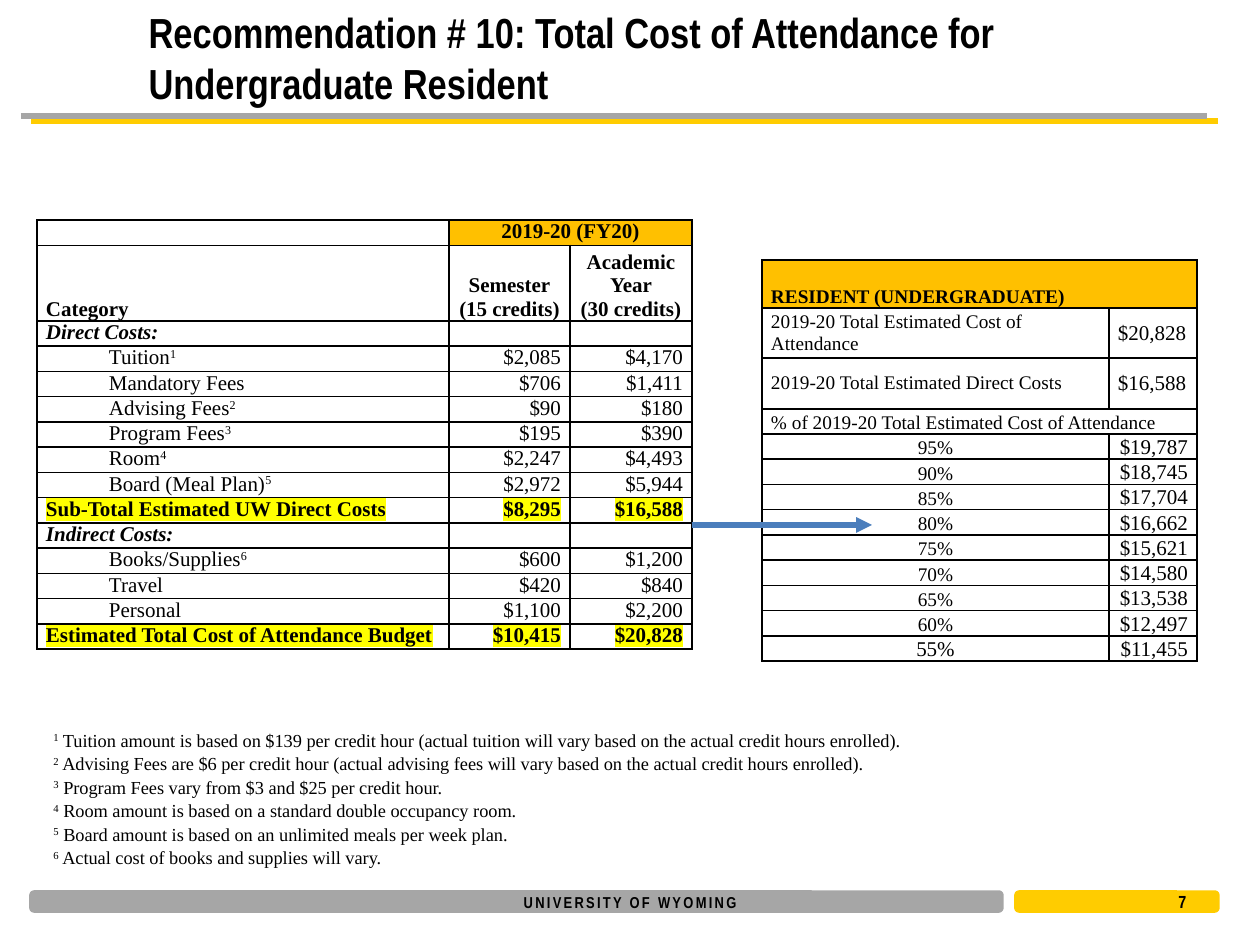
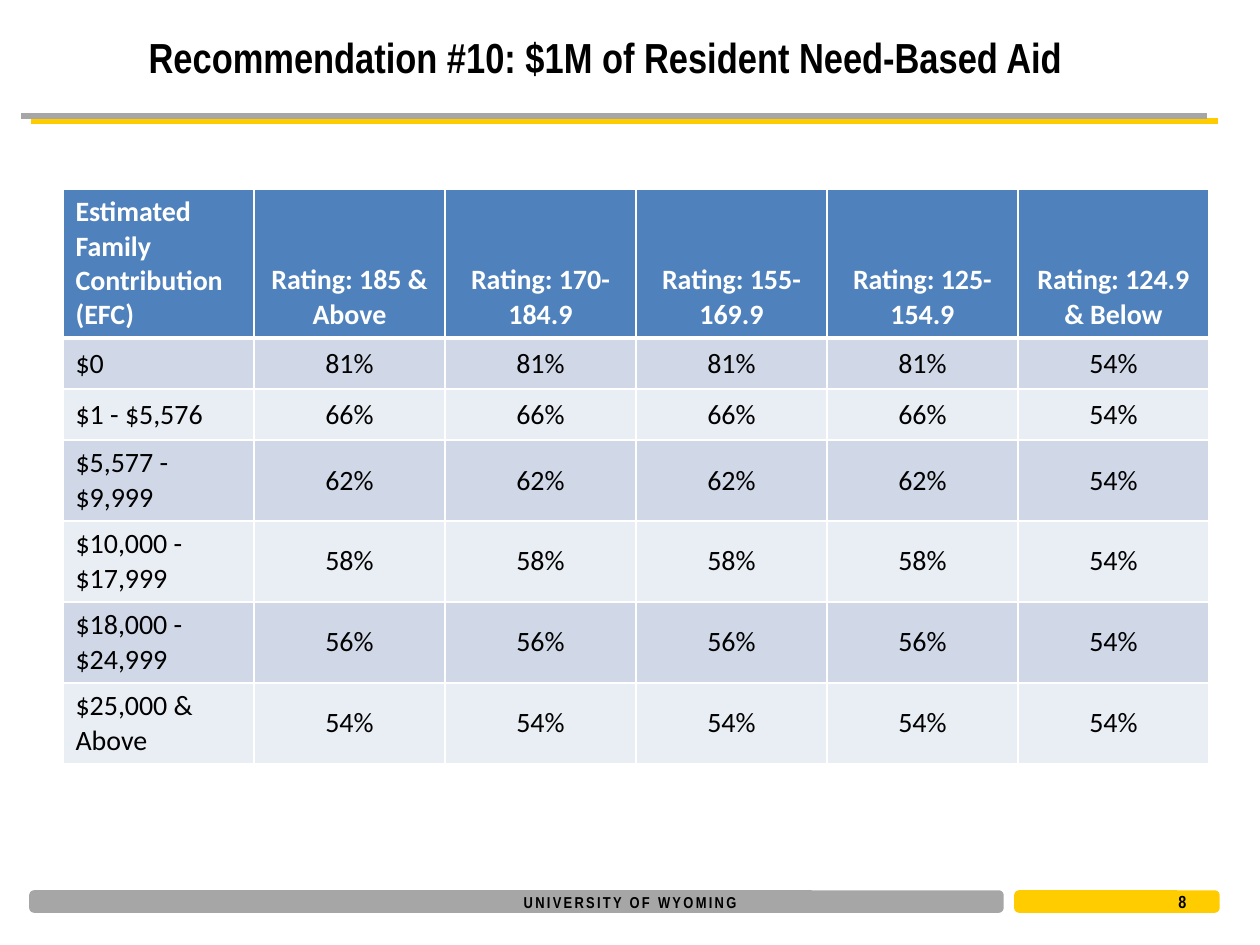
import collections

import lxml.etree
import pptx
import pptx.dml.color
import pptx.enum.shapes
import pptx.enum.text
import pptx.oxml.ns
import pptx.util

RGB = pptx.dml.color.RGBColor
BLACK = RGB(0x00, 0x00, 0x00)
WHITE = RGB(0xFF, 0xFF, 0xFF)
GRAY = RGB(0xA6, 0xA6, 0xA6)
GOLD = RGB(0xFF, 0xCC, 0x00)
AMBER = RGB(0xFF, 0xC0, 0x00)
YELLOW = RGB(0xFF, 0xFF, 0x00)
ARROW_BLUE = RGB(0x4B, 0x7E, 0xBC)
HEADER_BLUE = RGB(0x4F, 0x81, 0xBD)
BAND_DARK = RGB(0xD0, 0xD8, 0xE8)
BAND_LIGHT = RGB(0xE9, 0xED, 0xF4)

NARROW = "Arial Narrow"
SERIF = "Times New Roman"
SANS = "Calibri"
LEFT, CENTER, RIGHT = (pptx.enum.text.PP_ALIGN.LEFT, pptx.enum.text.PP_ALIGN.CENTER,
                       pptx.enum.text.PP_ALIGN.RIGHT)
TOP, MIDDLE, BOTTOM = (pptx.enum.text.MSO_ANCHOR.TOP, pptx.enum.text.MSO_ANCHOR.MIDDLE,
                       pptx.enum.text.MSO_ANCHOR.BOTTOM)

PIXELS_PER_INCH = 126
Box = collections.namedtuple("Box", "left top width height")

COSTS = [
    ("Direct Costs:", "", ""),
    ("Tuition^1", "$2,085", "$4,170"),
    ("Mandatory Fees", "$706", "$1,411"),
    ("Advising Fees^2", "$90", "$180"),
    ("Program Fees^3", "$195", "$390"),
    ("Room^4", "$2,247", "$4,493"),
    ("Board (Meal Plan)^5", "$2,972", "$5,944"),
    ("Sub-Total Estimated UW Direct Costs", "$8,295", "$16,588"),
    ("Indirect Costs:", "", ""),
    ("Books/Supplies^6", "$600", "$1,200"),
    ("Travel", "$420", "$840"),
    ("Personal", "$1,100", "$2,200"),
    ("Estimated Total Cost of Attendance Budget", "$10,415", "$20,828"),
]
SHARES = [
    ("95%", "$19,787"), ("90%", "$18,745"), ("85%", "$17,704"), ("80%", "$16,662"),
    ("75%", "$15,621"), ("70%", "$14,580"), ("65%", "$13,538"), ("60%", "$12,497"),
    ("55%", "$11,455"),
]
FOOTNOTES = """^1^ Tuition amount is based on $139 per credit hour (actual tuition will vary based on the actual credit hours enrolled).
^2^ Advising Fees are $6 per credit hour (actual advising fees will vary based on the actual credit hours enrolled).
^3^ Program Fees vary from $3 and $25 per credit hour.
^4^ Room amount is based on a standard double occupancy room.
^5^ Board amount is based on an unlimited meals per week plan.
^6^ Actual cost of books and supplies will vary."""
RATINGS = ["185 & Above", "170-184.9", "155-169.9", "125-154.9", "124.9 & Below"]
AID = [
    ("$0", "81%"), ("$1 - $5,576", "66%"), ("$5,577 - $9,999", "62%"),
    ("$10,000 - $17,999", "58%"), ("$18,000 - $24,999", "56%"), ("$25,000 & Above", "54%"),
]
LOWEST_RATING_AID = "54%"


def px(length):
    return pptx.util.Emu(round(length * 914400 / PIXELS_PER_INCH))


def add_element(parent, tag, **attributes):
    return lxml.etree.SubElement(parent, pptx.oxml.ns.qn(tag), attributes)


def add_color(parent, tag, color):
    add_element(add_element(parent, tag), "a:srgbClr", val=str(color))


def write(frame, text, font=SERIF, size=12, color=BLACK, bold=False, italic=False,
          align=LEFT, line_spacing=None, highlight=None, tracking=None):
    frame.text = text
    for paragraph, line in zip(frame.paragraphs, text.split("\n")):
        paragraph.clear()
        paragraph.alignment = align
        if line_spacing:
            paragraph.line_spacing = line_spacing
        if not line:
            add_element(paragraph._p, "a:endParaRPr", sz=str(size * 100))
        for index, piece in enumerate(line.split("^")):
            if not piece:
                continue
            run = paragraph.add_run()
            run.text = piece
            run.font.name = font
            run.font.size = pptx.util.Pt(size)
            run.font.bold = bold
            run.font.italic = italic
            run.font.color.rgb = color
            properties = run.font._element
            if index % 2:
                properties.set("baseline", "30000")
            if tracking:
                properties.set("spc", str(tracking))
            if highlight:
                add_color(properties, "a:highlight", highlight)
                properties.find(pptx.oxml.ns.qn("a:solidFill")).addnext(properties[-1])


def add_text(slide, box, text, anchor=TOP, **text_format):
    frame = slide.shapes.add_textbox(*map(px, box)).text_frame
    frame.word_wrap = True
    frame.vertical_anchor = anchor
    write(frame, text, **text_format)


def add_line(slide, start, end, color):
    line = slide.shapes.add_connector(
        pptx.enum.shapes.MSO_CONNECTOR.STRAIGHT, *map(px, start + end))
    line.line.color.rgb = color
    line.line.width = pptx.util.Pt(3)
    add_element(line._element.spPr, "a:effectLst")
    return line


def add_bar(slide, box, color):
    bar = slide.shapes.add_shape(
        pptx.enum.shapes.MSO_SHAPE.ROUNDED_RECTANGLE, *map(px, box))
    bar.shadow.inherit = False
    bar.fill.solid()
    bar.fill.fore_color.rgb = color
    bar.line.color.rgb = color
    bar.line.width = pptx.util.Pt(2)


def draw_frame(slide, box):
    rule_top = box.top + 116
    add_line(slide, (box.left + 31, rule_top + 5), (box.left + 1218, rule_top + 5), GOLD)
    add_line(slide, (box.left + 21, rule_top), (box.left + 1207, rule_top), GRAY)
    bar_top = box.top + box.height - 53
    add_bar(slide, Box(box.left + 31, bar_top, 971, 19), GRAY)
    add_bar(slide, Box(box.left + 1016, bar_top, 202, 19), GOLD)
    add_text(slide, Box(box.left + 430, bar_top - 6, 400, 32), "UNIVERSITY OF WYOMING",
             anchor=MIDDLE, font=NARROW, size=9, bold=True, align=CENTER, tracking=130)


def share_frame(slide, layout):
    drawn = [shape for shape in slide.shapes if not shape.is_placeholder]
    for shape in drawn:
        layout.shapes._spTree.append(shape._element)


def add_title(slide, box, title, number):
    shape = slide.shapes.title
    shape.left, shape.top, shape.width, shape.height = map(
        px, (box.left + 136, box.top + 19, 1103, 76))
    frame = shape.text_frame
    frame.auto_size = pptx.enum.text.MSO_AUTO_SIZE.NONE
    frame.vertical_anchor = MIDDLE
    write(frame, title, font=NARROW, size=24, bold=True)
    add_text(slide, Box(box.left + 1166, box.top + 890, 63, 24), number,
             anchor=MIDDLE, font=NARROW, size=10, bold=True)


def set_borders(cell, color, bottom_width=1):
    properties = cell._tc.get_or_add_tcPr()
    for side in "LRTB":
        width = pptx.util.Pt(bottom_width if side == "B" else 1)
        add_color(add_element(properties, f"a:ln{side}", w=str(width)), "a:solidFill", color)


def add_grid(slide, left, top, columns, rows):
    table = slide.shapes.add_table(
        len(rows), len(columns), px(left), px(top), px(sum(columns)), px(sum(rows))).table
    table.first_row = table.horz_banding = False
    for column, width in zip(table.columns, columns):
        column.width = px(width)
    for row, height in zip(table.rows, rows):
        row.height = px(height)
    return table


def fill_cell(cell, text, fill=None, border=BLACK, bottom_width=1, anchor=TOP, **text_format):
    set_borders(cell, border, bottom_width)
    if fill is None:
        cell.fill.background()
    else:
        cell.fill.solid()
        cell.fill.fore_color.rgb = fill
    cell.vertical_anchor = anchor
    write(cell.text_frame, text, **text_format)


def fill_tight_cell(cell, text, indent=0, **text_format):
    cell.margin_left = px(9 + indent)
    cell.margin_right = px(9)
    cell.margin_top = cell.margin_bottom = 0
    fill_cell(cell, text, **text_format)


def merge_pair(table, row, first):
    table.cell(row, first).merge(table.cell(row, first + 1))


def draw_cost_table(slide, box):
    table = add_grid(slide, box.left, box.top, [412, 121, box.width - 533],
                     [25, 75] + [25] * len(COSTS))
    for column, text in enumerate(["", "2019-20 (FY20)", ""]):
        fill_tight_cell(table.cell(0, column), text, fill=AMBER if column else None,
                        bold=True, align=CENTER)
    merge_pair(table, 0, 1)
    headings = ["Category", "Semester\n(15 credits)", "Academic Year\n(30 credits)"]
    for column, text in enumerate(headings):
        fill_tight_cell(table.cell(1, column), text, anchor=BOTTOM, bold=True,
                        align=CENTER if column else LEFT)
    for row, values in enumerate(COSTS, 2):
        is_group = values[0].endswith(":")
        is_total = "Estimated" in values[0]
        for column, text in enumerate(values):
            is_item = not (is_group or is_total or column)
            fill_tight_cell(table.cell(row, column), text, indent=63 if is_item else 0,
                            bold=is_group or is_total, italic=is_group,
                            highlight=YELLOW if is_total else None,
                            align=RIGHT if column else LEFT)


def draw_resident_table(slide, box):
    table = add_grid(slide, box.left, box.top, [box.width - 88, 88],
                     [48, 50, 51] + [25] * (len(SHARES) + 1))
    totals = [("2019-20 Total Estimated Cost of Attendance", "$20,828"),
              ("2019-20 Total Estimated Direct Costs", "$16,588")]
    for column, text in enumerate(["RESIDENT (UNDERGRADUATE)", ""]):
        fill_tight_cell(table.cell(0, column), text, fill=AMBER, anchor=BOTTOM,
                        size=11, bold=True)
    for row, values in enumerate(totals, 1):
        for column, text in enumerate(values):
            fill_tight_cell(table.cell(row, column), text, anchor=MIDDLE,
                            size=12 if column else 11)
    for column, text in enumerate(["% of 2019-20 Total Estimated Cost of Attendance", ""]):
        fill_tight_cell(table.cell(3, column), text, anchor=BOTTOM, size=11)
    for row in (0, 3):
        merge_pair(table, row, 0)
    for row, values in enumerate(SHARES, 4):
        for column, text in enumerate(values):
            is_large = column or values == SHARES[-1]
            fill_tight_cell(table.cell(row, column), text, anchor=BOTTOM,
                            size=12 if is_large else 11,
                            align=RIGHT if column else CENTER)


def draw_arrow(slide, box):
    arrow = add_line(slide, (box.left, box.top), (box.left + box.width, box.top), ARROW_BLUE)
    add_element(arrow.line._get_or_add_ln(), "a:tailEnd", type="triangle")


def draw_aid_table(slide, box):
    columns = len(RATINGS) + 1
    table = add_grid(slide, box.left, box.top, [box.width // columns] * columns,
                     [149, 51, 51] + [81] * 4)
    headings = ["Estimated Family Contribution (EFC)"] + [f"Rating: {name}" for name in RATINGS]
    for column, text in enumerate(headings):
        fill_cell(table.cell(0, column), text, fill=HEADER_BLUE, border=WHITE, bottom_width=3,
                  anchor=BOTTOM if column else TOP, font=SANS, size=16, color=WHITE,
                  bold=True, align=CENTER if column else LEFT)
    for row, (contribution, aid) in enumerate(AID, 1):
        values = [contribution] + [aid] * (columns - 2) + [LOWEST_RATING_AID]
        for column, text in enumerate(values):
            fill_cell(table.cell(row, column), text, border=WHITE, anchor=MIDDLE,
                      fill=BAND_DARK if row % 2 else BAND_LIGHT, font=SANS, size=16,
                      align=CENTER if column else LEFT)


def main():
    presentation = pptx.Presentation()
    page = Box(0, 0, 1260, 945)
    presentation.slide_width, presentation.slide_height = px(page.width), px(page.height)
    layout = presentation.slide_layouts[5]

    cost_slide = presentation.slides.add_slide(layout)
    draw_frame(cost_slide, page)
    share_frame(cost_slide, layout)
    add_title(cost_slide, page, "Recommendation # 10: Total Cost of Attendance for "
              "Undergraduate Resident", "7")
    draw_resident_table(cost_slide, Box(762, 260, 435, 400))
    draw_cost_table(cost_slide, Box(37, 220, 655, 425))
    add_text(cost_slide, Box(41, 721, 1185, 155), FOOTNOTES, size=10.5, line_spacing=1.07)
    draw_arrow(cost_slide, Box(692, 525, 180, 0))

    aid_slide = presentation.slides.add_slide(layout)
    add_title(aid_slide, page, "Recommendation #10: $1M of Resident Need-Based Aid", "8")
    draw_aid_table(aid_slide, Box(63, 189, 1146, 575))

    presentation.save("out.pptx")


if __name__ == "__main__":
    main()
